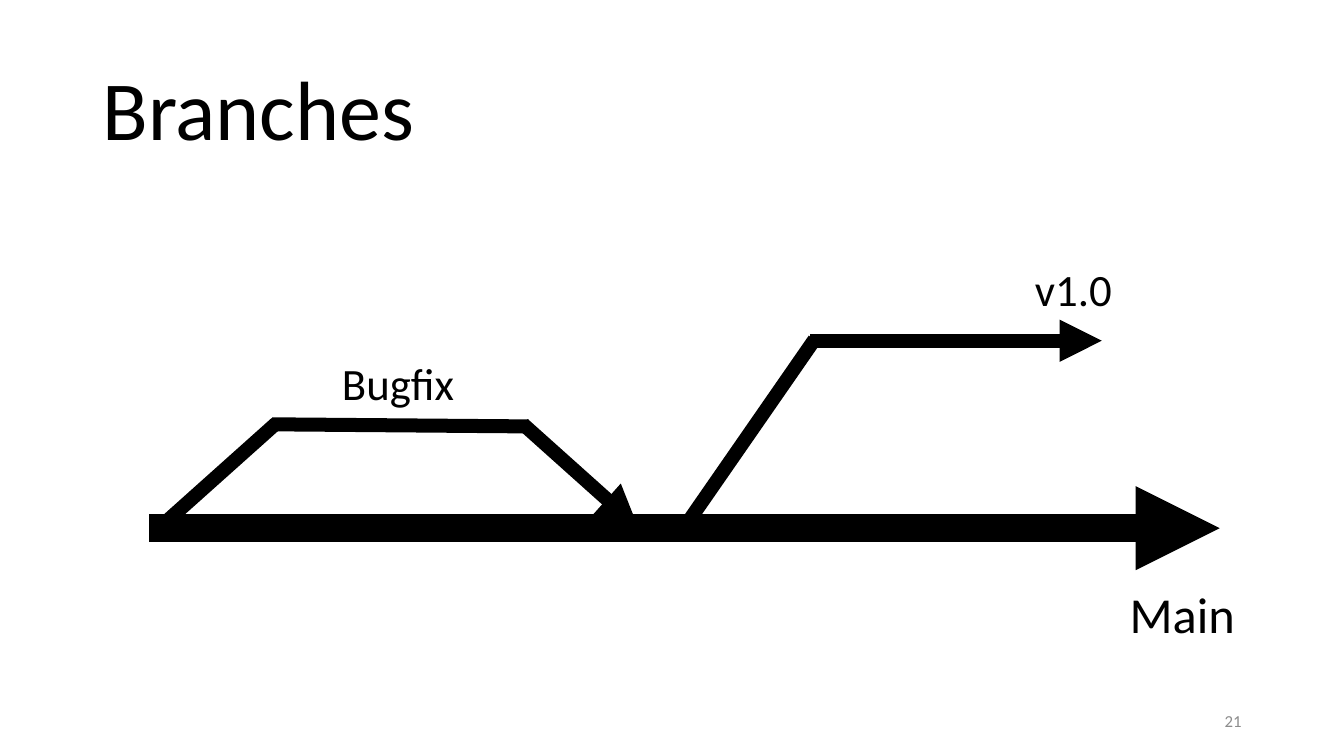
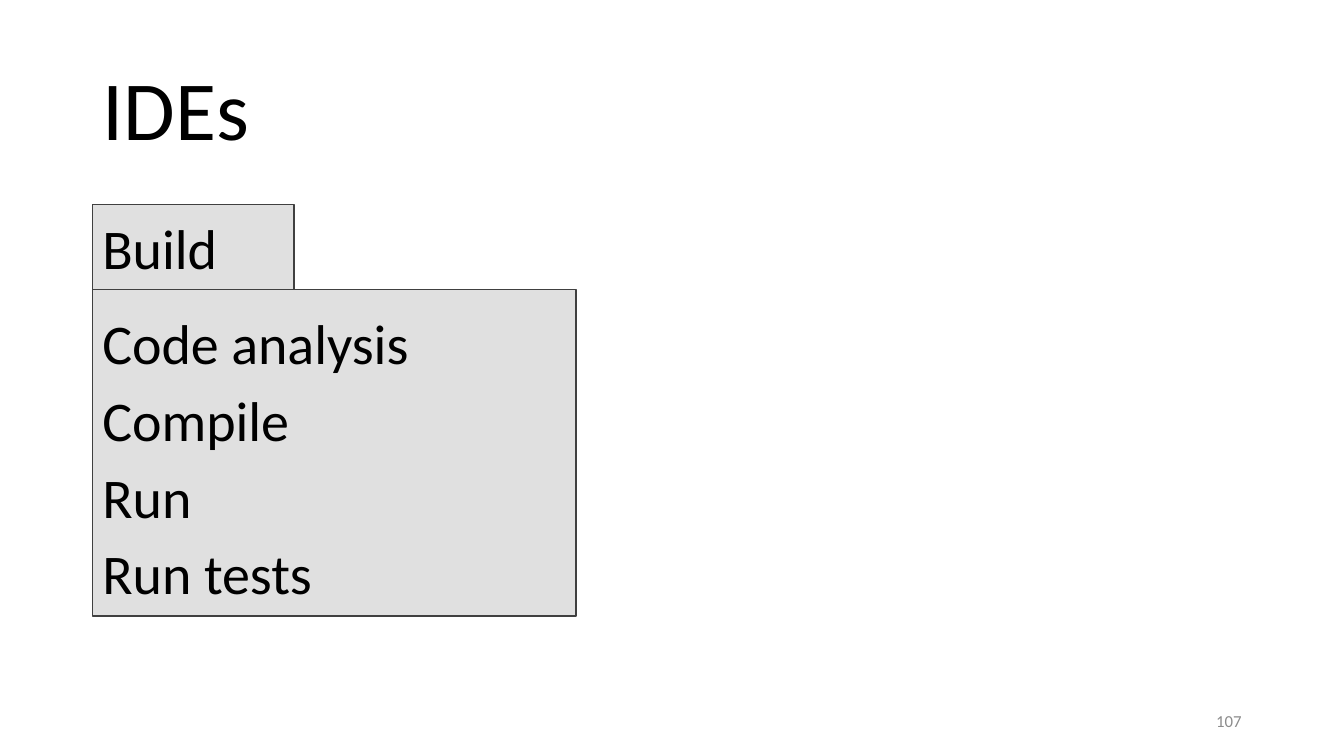
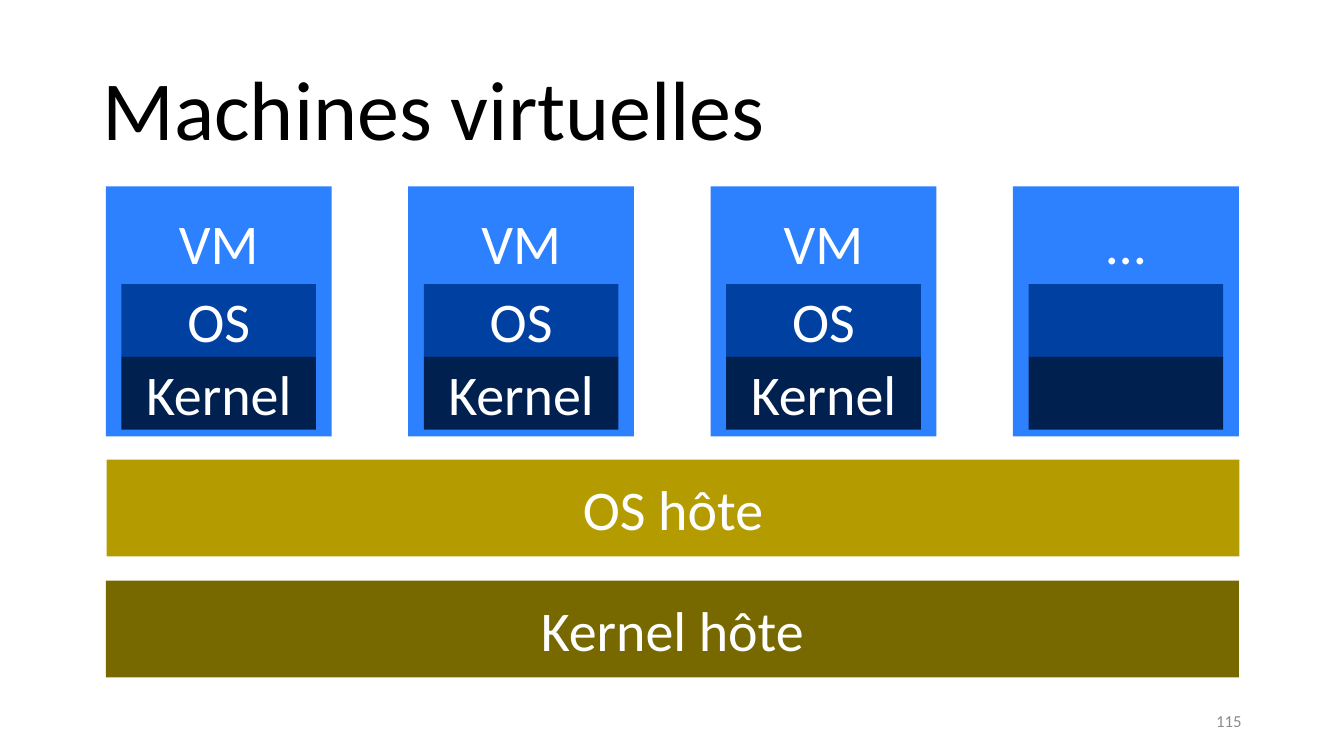
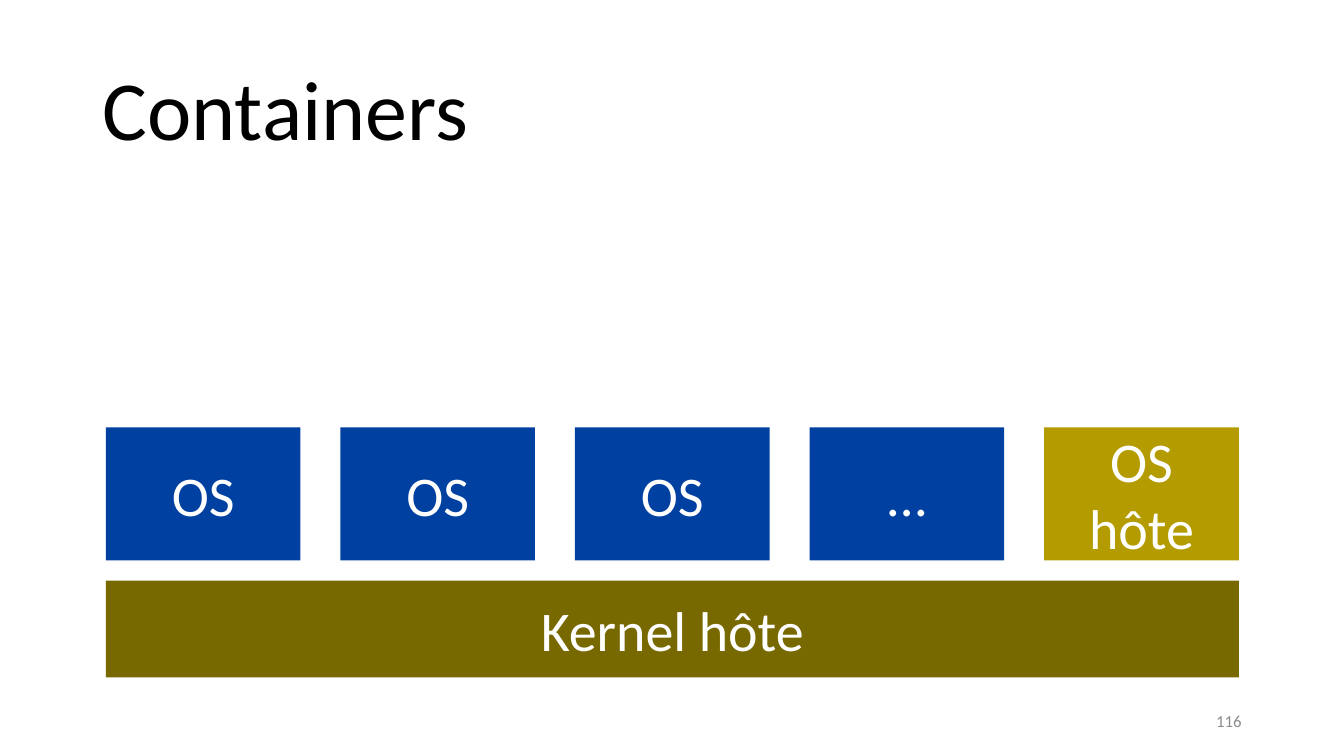
from dataclasses import dataclass

from lxml.etree import SubElement
from pptx import Presentation
from pptx.dml.color import RGBColor
from pptx.enum.shapes import MSO_CONNECTOR as Connector, MSO_SHAPE as Preset
from pptx.enum.text import MSO_ANCHOR as Anchor, MSO_AUTO_SIZE as AutoSize, PP_ALIGN as Align
from pptx.oxml.ns import qn
from pptx.presentation import Presentation as Deck
from pptx.shapes.shapetree import _BaseGroupShapes as Shapes
from pptx.slide import Slide
from pptx.text.text import TextFrame
from pptx.util import Pt


@dataclass(frozen=True)
class Theme:
    font: str = "Calibri"
    ink: str = "000000"
    paper: str = "FFFFFF"
    page_number: str = "8C8C8C"
    menu: str = "E0E0E0"
    menu_edge: str = "404040"
    vm: str = "2D81FF"
    guest_os: str = "0040A0"
    guest_kernel: str = "002050"
    host_os: str = "B49C00"
    host_kernel: str = "786800"
    title_size: float = 60
    block_size: float = 40
    main_size: float = 36
    branch_size: float = 32
    number_size: float = 12


THEME = Theme()


@dataclass(frozen=True)
class Box:
    left: float
    top: float
    width: float
    height: float

    def points(self) -> tuple[Pt, Pt, Pt, Pt]:
        return Pt(self.left), Pt(self.top), Pt(self.width), Pt(self.height)


@dataclass(frozen=True)
class Stroke:
    start: tuple[float, float]
    end: tuple[float, float]
    weight: float = 10
    arrow: bool = False


@dataclass(frozen=True)
class Label:
    text: str
    box: Box
    size: float


TITLE = Box(66, 28.8, 828, 104.4)
PAGE_NUMBER = Box(678, 500.5, 216, 28.8)
HOST_KERNEL = Box(75.6, 414.8, 809.3, 69.1)
HOST_OS = Box(76.1, 328.4, 809.3, 69.1)

STROKES = [
    Stroke((106.6, 377.3), (871.2, 377.3), weight=20, arrow=True),
    Stroke((194.4, 303.1), (377.3, 304.6)),
    Stroke((578.9, 243.4), (787, 243.4), arrow=True),
    Stroke((373.7, 303.1), (455.8, 376.6), arrow=True),
    Stroke((197.3, 302.4), (115.2, 375.8)),
    Stroke((581.8, 242.6), (488.9, 376.6)),
]
BRANCH_LABELS = [
    Label("Main", Box(766.8, 413.3, 155.5, 51.1), THEME.main_size),
    Label("v1.0", Box(689, 183.6, 155.5, 46.1), THEME.branch_size),
    Label("Bugfix", Box(206.6, 250.6, 155.5, 46.1), THEME.branch_size),
]


def write(frame: TextFrame, text: str, *, size: float = THEME.block_size,
          color: str = THEME.paper, align: Align = Align.CENTER,
          anchor: Anchor = Anchor.MIDDLE, spacing: float = 1.0,
          top_inset: float = 3.6) -> None:
    frame.auto_size = AutoSize.NONE
    frame.word_wrap = True
    frame.vertical_anchor = anchor
    frame.margin_left = frame.margin_right = Pt(7.2)
    frame.margin_top, frame.margin_bottom = Pt(top_inset), Pt(3.6)
    frame.text = text
    for paragraph in frame.paragraphs:
        paragraph.alignment = align
        paragraph.line_spacing = spacing
        for run in paragraph.runs:
            run.font.name = THEME.font
            run.font.size = Pt(size)
            run.font.color.rgb = RGBColor.from_string(color)


def add_block(shapes: Shapes, box: Box, fill: str, text: str = "", *,
              edge: str | None = None, **text_format) -> None:
    block = shapes.add_shape(Preset.RECTANGLE, *box.points())
    block.shadow.inherit = False
    block.fill.solid()
    block.fill.fore_color.rgb = RGBColor.from_string(fill)
    if edge:
        block.line.color.rgb = RGBColor.from_string(edge)
        block.line.width = Pt(1)
    else:
        block.line.fill.background()
    if text:
        write(block.text_frame, text, **text_format)


def add_stroke(shapes: Shapes, stroke: Stroke) -> None:
    branch = shapes.add_connector(
        Connector.STRAIGHT, *map(Pt, (*stroke.start, *stroke.end)))
    branch.line.color.rgb = RGBColor.from_string(THEME.ink)
    branch.line.width = Pt(stroke.weight)
    properties = branch.element.spPr
    if stroke.arrow:
        SubElement(properties.find(qn("a:ln")), qn("a:tailEnd"), type="triangle")
    SubElement(properties, qn("a:effectLst"))


def add_label(shapes: Shapes, label: Label, **text_format) -> None:
    caption = shapes.add_textbox(*label.box.points())
    write(caption.text_frame, label.text, size=label.size, **text_format)


def add_slide(deck: Deck, heading: str, number: int) -> Slide:
    slide = deck.slides.add_slide(deck.slide_layouts.get_by_name("Title Only"))
    title = slide.shapes.title
    title.left, title.top, title.width, title.height = TITLE.points()
    write(title.text_frame, heading, size=THEME.title_size, color=THEME.ink,
          align=Align.LEFT, spacing=0.9)
    add_label(slide.shapes, Label(str(number), PAGE_NUMBER, THEME.number_size),
              color=THEME.page_number, align=Align.RIGHT)
    return slide


def spread(count: int, width: float) -> list[float]:
    step = (HOST_KERNEL.width - width) / (count - 1)
    return [HOST_KERNEL.left + index * step for index in range(count)]


def add_branches(deck: Deck) -> None:
    shapes = add_slide(deck, "Branches", 21).shapes
    for stroke in STROKES:
        add_stroke(shapes, stroke)
    for label in BRANCH_LABELS:
        add_label(shapes, label, color=THEME.ink, anchor=Anchor.TOP)


def add_ides(deck: Deck) -> None:
    shapes = add_slide(deck, "IDEs", 107).shapes
    menu_format = dict(edge=THEME.menu_edge, color=THEME.ink, align=Align.LEFT)
    add_block(shapes, Box(66, 146.2, 144, 60.5), THEME.menu, "Build", **menu_format)
    add_block(shapes, Box(66, 206.7, 345.6, 233.3), THEME.menu,
              "Code analysis\nCompile\nRun\nRun tests", spacing=1.14, **menu_format)


def add_host_kernel(shapes: Shapes) -> None:
    add_block(shapes, HOST_KERNEL, THEME.host_kernel, "Kernel hôte")


def add_virtual_machines(deck: Deck) -> None:
    shapes = add_slide(deck, "Machines virtuelles", 115).shapes
    add_block(shapes, HOST_OS, THEME.host_os, "OS hôte")
    add_host_kernel(shapes)
    vm_width, layer_width, layer_height = 161.3, 139, 52
    inset = (vm_width - layer_width) / 2
    machines = [("VM", "OS", "Kernel")] * 3 + [("…", "", "")]
    for left, (name, *layers) in zip(spread(len(machines), vm_width), machines):
        machine = shapes.add_group_shape().shapes
        add_block(machine, Box(left, 133.2, vm_width, 178.6), THEME.vm, name,
                  anchor=Anchor.TOP, top_inset=16)
        for row, (layer, fill) in enumerate(
                zip(layers, (THEME.guest_os, THEME.guest_kernel))):
            add_block(machine, Box(left + inset, 203 + row * layer_height,
                                   layer_width, layer_height), fill, layer)


def add_containers(deck: Deck) -> None:
    shapes = add_slide(deck, "Containers", 116).shapes
    add_host_kernel(shapes)
    systems = [(name, THEME.guest_os) for name in ("OS", "OS", "OS", "…")]
    systems.append(("OS hôte", THEME.host_os))
    width = 139
    for left, (name, fill) in zip(spread(len(systems), width), systems):
        add_block(shapes, Box(left, 305.3, width, 95), fill, name)


def main() -> None:
    deck = Presentation()
    deck.slide_width, deck.slide_height = Pt(960), Pt(540)
    for add_topic in (add_branches, add_ides, add_virtual_machines, add_containers):
        add_topic(deck)
    deck.save("out.pptx")


if __name__ == "__main__":
    main()
